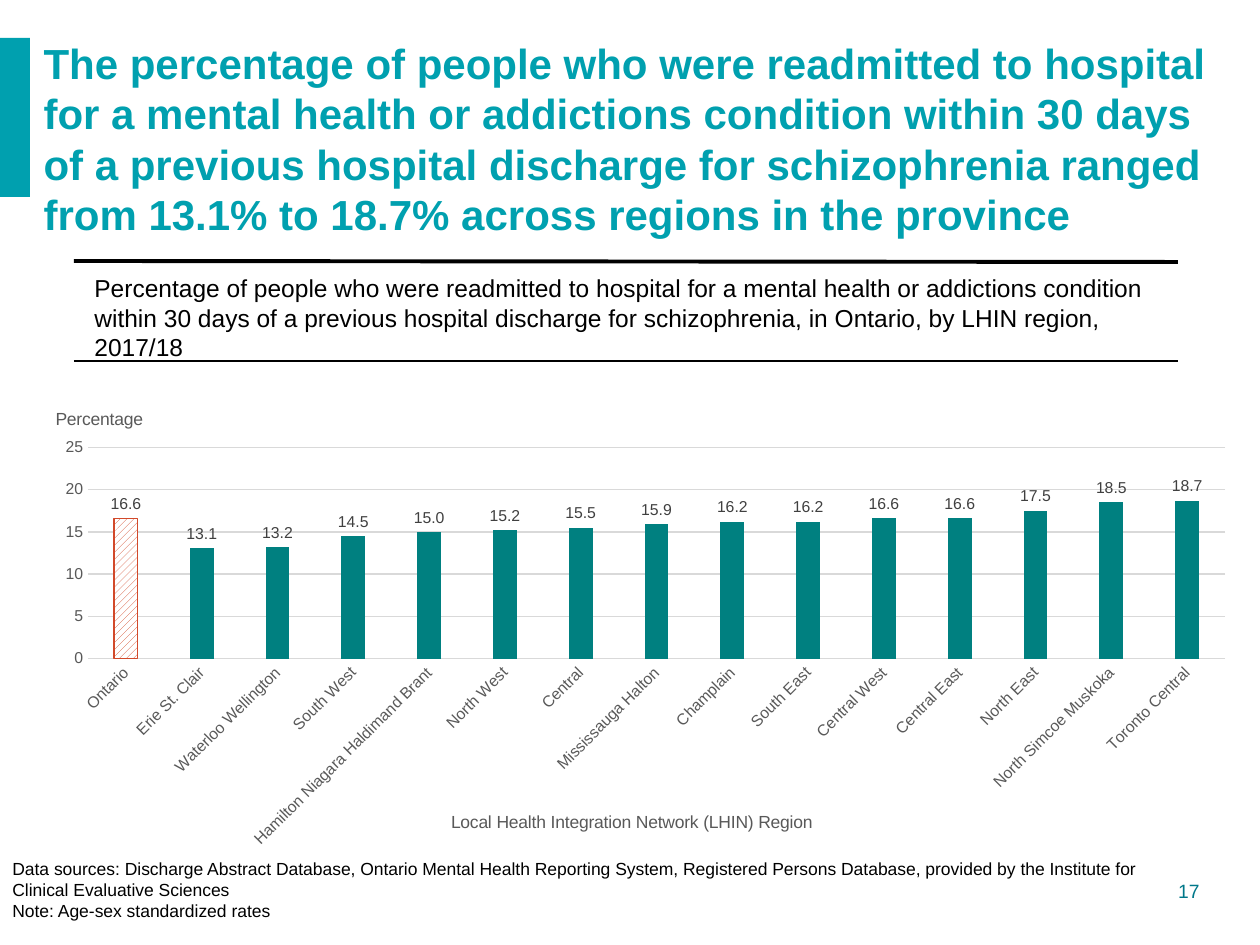
from dataclasses import dataclass

from lxml import etree
from pptx import Presentation
from pptx import util as u
from pptx.chart.data import CategoryChartData
from pptx.dml.color import RGBColor
from pptx.enum import chart as ch
from pptx.enum import dml, shapes, text
from pptx.oxml import parse_xml
from pptx.oxml.ns import nsdecls, qn

PX_PER_INCH = 126


@dataclass(frozen=True)
class Theme:
    font: str = "Arial"
    accent: str = "00A0AF"
    number: str = "00788A"
    ink: str = "000000"
    bar: str = "008080"
    highlight: str = "D2492A"
    paper: str = "FFFFFF"
    grid: str = "D9D9D9"
    axis: str = "595959"
    label: str = "404040"
    title_size: int = 24
    subtitle_size: int = 14
    number_size: int = 11
    note_size: int = 10
    axis_size: int = 9


THEME = Theme()

TITLE = ("The percentage of people who were readmitted to hospital for a mental health or "
         "addictions condition within 30 days of a previous hospital discharge for "
         "schizophrenia ranged from 13.1% to 18.7% across regions in the province")
SUBTITLE = ("Percentage of people who were readmitted to hospital for a mental health or "
            "addictions condition within 30 days of a previous hospital discharge for "
            "schizophrenia, in Ontario, by LHIN region, 2017/18")
SOURCES = ("Data sources: Discharge Abstract Database, Ontario Mental Health Reporting System, "
           "Registered Persons Database, provided by the Institute for Clinical Evaluative Sciences")
NOTE = "Note: Age-sex standardized rates"

RATES = {
    "Ontario": 16.6, "Erie St. Clair": 13.1, "Waterloo Wellington": 13.2,
    "South West": 14.5, "Hamilton Niagara Haldimand Brant": 15.0, "North West": 15.2,
    "Central": 15.5, "Mississauga Halton": 15.9, "Champlain": 16.2, "South East": 16.2,
    "Central West": 16.6, "Central East": 16.6, "North East": 17.5,
    "North Simcoe Muskoka": 18.5, "Toronto Central": 18.7,
}


def px(*lengths):
    return [u.Emu(round(n * 914400 / PX_PER_INCH)) for n in lengths]


def rgb(color):
    return RGBColor.from_string(color)


def style_font(font, size, color, bold=False):
    font.name, font.size, font.bold = THEME.font, u.Pt(size), bold
    font.color.rgb = rgb(color)


def write(frame, *lines, size, color=THEME.ink, bold=False, align=text.PP_ALIGN.LEFT,
          before=0, fit=text.MSO_AUTO_SIZE.SHAPE_TO_FIT_TEXT):
    frame.word_wrap, frame.auto_size = True, fit
    for i, line in enumerate(lines):
        paragraph = frame.paragraphs[0] if i == 0 else frame.add_paragraph()
        paragraph.alignment, paragraph.space_before = align, u.Pt(before)
        run = paragraph.add_run()
        run.text = line
        style_font(run.font, size, color, bold)


def add_rule(slide, x1, y1, x2, y2, width):
    rule = slide.shapes.add_connector(shapes.MSO_CONNECTOR.STRAIGHT, *px(x1, y1, x2, y2))
    rule.line.color.rgb, rule.line.width = rgb(THEME.ink), u.Pt(width)
    etree.SubElement(rule._element.spPr, qn("a:effectLst"))


def add_header(slide, x, y, w, h):
    # Accent bar at the slide's left edge
    accent = slide.shapes.add_shape(shapes.MSO_SHAPE.RECTANGLE, *px(0, y + 7, x - 1, 159))
    accent.shadow.inherit = False
    accent.fill.solid()
    accent.fill.fore_color.rgb = rgb(THEME.accent)
    accent.line.fill.background()

    # Headline
    headline = slide.shapes.title
    headline.left, headline.top, headline.width, headline.height = px(x, y, w, h)
    headline.text_frame.vertical_anchor = text.MSO_ANCHOR.MIDDLE
    write(headline.text_frame, TITLE, size=THEME.title_size, color=THEME.accent,
          bold=True, fit=text.MSO_AUTO_SIZE.NONE)


def add_subtitle(slide, x, y, w, h):
    # Description between a heavy and a light rule
    description = slide.shapes.add_textbox(*px(x + 8, y + 6, w - 12, h + 1))
    write(description.text_frame, SUBTITLE, size=THEME.subtitle_size)
    add_rule(slide, x, y, x + w, y + 1, 2.25)
    add_rule(slide, x, y + h, x + w, y + h, 1)


def manual_layout(x, y, w=None, h=None):
    parts = [("xMode", "edge"), ("yMode", "edge"), ("x", x), ("y", y)]
    if w is not None:
        parts = [("layoutTarget", "inner")] + parts + [("w", w), ("h", h)]
    body = "".join(f'<c:{tag} val="{value}"/>' for tag, value in parts)
    return parse_xml(f'<c:layout {nsdecls("c")}><c:manualLayout>{body}'
                     '</c:manualLayout></c:layout>')


def style_axis(axis, title, x, y, label_turn):
    axis.major_tick_mark = axis.minor_tick_mark = ch.XL_TICK_MARK.NONE
    style_font(axis.tick_labels.font, THEME.axis_size, THEME.axis)
    axis._element.find(qn("c:txPr")).find(qn("a:bodyPr")).set("rot", str(label_turn * 60000))

    # Axis title, set level and placed by chart fractions
    heading = axis.axis_title
    run = heading.text_frame.paragraphs[0].add_run()
    run.text = title
    style_font(run.font, THEME.note_size, THEME.axis)
    element = heading._element
    element.find(".//" + qn("a:bodyPr")).set("rot", "0")
    for old in element.findall(qn("c:layout")):
        element.remove(old)
    element.find(qn("c:tx")).addnext(manual_layout(x, y))


def add_rate_chart(slide, x, y, w, h):
    data = CategoryChartData(number_format="0.0")
    data.categories = list(RATES)
    data.add_series("Series 1", list(RATES.values()))
    chart = slide.shapes.add_chart(ch.XL_CHART_TYPE.COLUMN_CLUSTERED, *px(x, y, w, h), data).chart
    chart.has_legend = chart.has_title = False
    style_font(chart.font, THEME.note_size, THEME.ink)
    plot_area = chart._chartSpace.chart.plotArea
    for old in plot_area.findall(qn("c:layout")):
        plot_area.remove(old)
    plot_area.insert(0, manual_layout(0.057, 0.141, 0.926, 0.361))

    # Axes
    regions, percentages = chart.category_axis, chart.value_axis
    style_axis(regions, "Local Health Integration Network (LHIN) Region", 0.35, 0.757, -45)
    style_axis(percentages, "Percentage", 0.028, 0.068, 0)
    percentages.minimum_scale, percentages.maximum_scale, percentages.major_unit = 0, 25, 5
    percentages.tick_labels.number_format = "0"
    percentages.tick_labels.number_format_is_linked = False
    percentages.format.line.fill.background()
    for line in (regions.format.line, percentages.major_gridlines.format.line):
        line.color.rgb, line.width = rgb(THEME.grid), u.Pt(0.75)

    # Bars, with the province hatched
    plot = chart.plots[0]
    plot.gap_width, plot.overlap, plot.vary_by_categories = 219, -27, False
    rates = plot.series[0]
    rates.invert_if_negative = False
    rates.format.fill.solid()
    rates.format.fill.fore_color.rgb = rgb(THEME.bar)
    province = rates.points[0].format
    province.fill.patterned()
    province.fill.pattern = dml.MSO_PATTERN.WIDE_UPWARD_DIAGONAL
    province.fill.fore_color.rgb = rgb(THEME.highlight)
    province.fill.back_color.rgb = rgb(THEME.paper)
    province.line.color.rgb, province.line.width = rgb(THEME.highlight), u.Pt(0.75)

    # Value labels
    labels = rates.data_labels
    labels.show_value, labels.position = True, ch.XL_LABEL_POSITION.OUTSIDE_END
    labels.number_format, labels.number_format_is_linked = "0.0", False
    style_font(labels.font, THEME.axis_size, THEME.label)


def add_footer(slide, x, y, w, h):
    # Sources and note
    sources = slide.shapes.add_textbox(*px(x, y, w, h))
    write(sources.text_frame, SOURCES, NOTE, size=THEME.note_size)
    # Page number
    number = slide.shapes.add_textbox(*px(x + 1065, y + 21, 147, 37))
    write(number.text_frame, "17", size=THEME.number_size, color=THEME.number,
          align=text.PP_ALIGN.RIGHT, before=5.5)


def main():
    deck = Presentation()
    deck.slide_width, deck.slide_height = px(1260, 945)
    slide = deck.slides.add_slide(deck.slide_layouts[5])
    add_header(slide, 31, 31, 1217, 214)
    add_subtitle(slide, 74, 261, 1104, 100)
    add_rate_chart(slide, 18, 365, 1228, 585)
    add_footer(slide, 0, 852, 1174, 77)
    deck.save("out.pptx")


if __name__ == "__main__":
    main()
